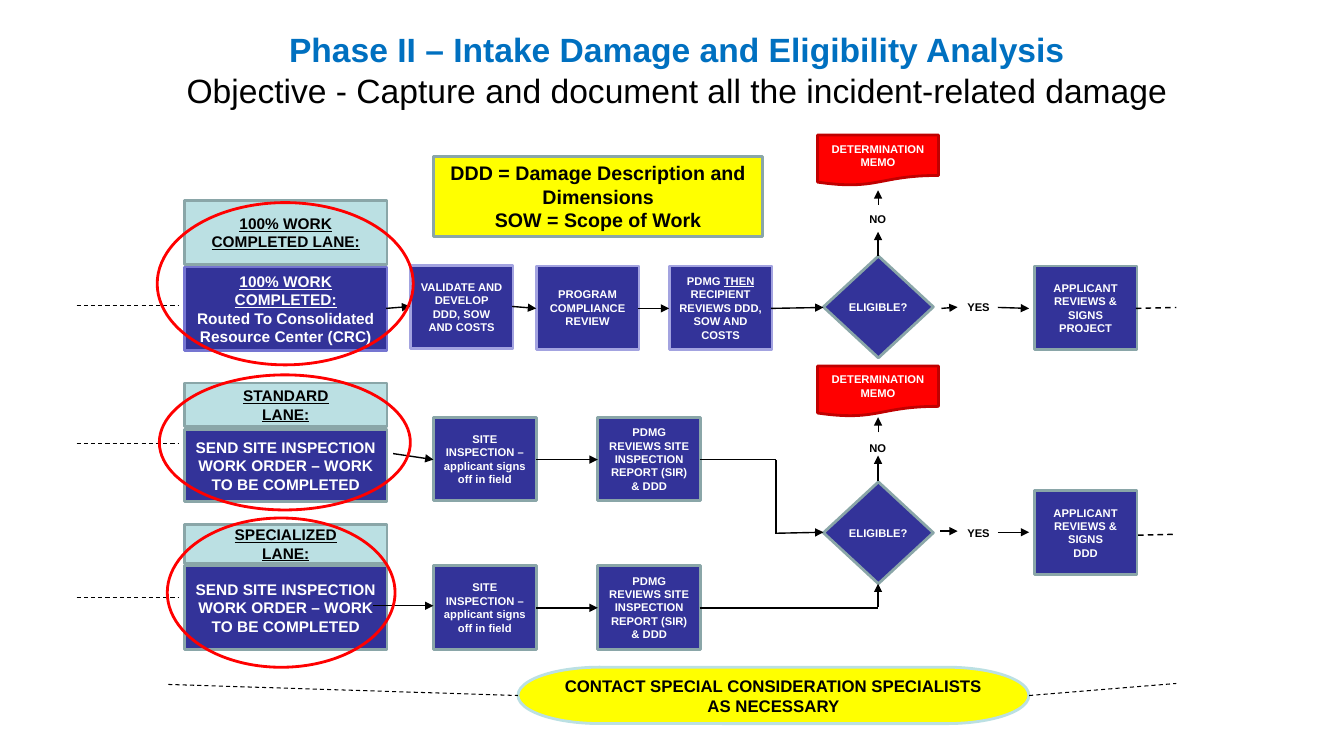
from pptx import Presentation
from pptx import util as u
from pptx.dml.color import RGBColor
from pptx.enum import dml, shapes, text
from pptx.oxml.ns import qn
from lxml import etree

Pt = u.Pt
MSO = shapes.MSO_SHAPE


class Theme:
    font = "Arial"
    title, note, special, lane, step = 24, 14, 12, 11, 8
    blue, navy, teal, yellow, red = "0070C0", "333399", "BBE0E3", "FFFF00", "FF0000"
    grey, violet, lilac, dark_red = "8AA6A8", "7575D1", "A3A3E0", "C00000"
    black, white = "000000", "FFFFFF"


# Content: a text is a list of paragraphs; a run is a string or (string, format)
TITLE = [[("Phase II – Intake Damage and Eligibility Analysis\n", dict(color=Theme.blue, bold=True)),
          "Objective - Capture and document all the incident-related damage"]]
NOTE = ["DDD = Damage Description and Dimensions\nSOW = Scope of Work"]
SPECIAL = ["CONTACT SPECIAL CONSIDERATION SPECIALISTS AS NECESSARY"]
WORK_ORDER = ["SEND SITE INSPECTION WORK ORDER – WORK TO BE COMPLETED"]
COMPLETED = [[("100% WORK COMPLETED:", dict(underline=True))],
             "Routed To Consolidated Resource Center (CRC)"]

# Lanes: heading, heading (top, height), body, body (top, height), edge, ellipse, inlet y
LANES = [
    (["100% WORK COMPLETED LANE:"], (143.3, 45.4), COMPLETED, (190.8, 59.8),
     Theme.violet, (112.3, 144.7, 182.9, 115.9), 218.2),
    (["STANDARD", "LANE:"], (273.6, 31), WORK_ORDER, (306.7, 51.8),
     Theme.grey, (113.8, 267.8, 179.3, 96.5), 316.8),
    (["SPECIALIZED", "LANE:"], (374.4, 28.1), WORK_ORDER, (404, 59.8),
     Theme.grey, (119.5, 370, 162.7, 106.6), 427),
]

# Steps of equal size: left, top, edge, text
INSPECT = ["SITE INSPECTION – applicant signs off in field"]
REPORT = ["PDMG REVIEWS SITE INSPECTION REPORT (SIR) & DDD"]
STEPS = [
    (293, 189.4, Theme.lilac, ["VALIDATE AND DEVELOP DDD, SOW AND COSTS"]),
    (383, 190, Theme.lilac, ["PROGRAM COMPLIANCE REVIEW"]),
    (478, 190, Theme.lilac, [["PDMG ", ("THEN", dict(underline=True)),
                              " RECIPIENT REVIEWS DDD, SOW AND COSTS"]]),
    (738.7, 190, Theme.grey, ["APPLICANT REVIEWS & SIGNS PROJECT"]),
    (738.7, 350.6, Theme.grey, ["APPLICANT REVIEWS & SIGNS", "DDD"]),
]
STEPS += [(x, y, Theme.grey, body) for y in (298, 404)
          for x, body in ((309.6, INSPECT), (427, REPORT))]

# Decisions: tops of diamond, memo, NO label and YES label
DECISIONS = [(182.9, 96.5, 148.3, 211), (344.2, 261.4, 311.8, 372.2)]

# Lines: x1, y1, x2, y2
AXIS = 627.2
ARROWS = [
    (275.8, 220.3, 293, 218.9), (365.8, 218.9, 383, 220.3), (455.8, 220.3, 478, 220.3),
    (550.8, 220.3, 588.2, 219.6), (672.5, 220.3, 684, 219.4), (712.8, 219.6, 735.1, 220.3),
    (280.8, 324, 309.6, 328.3), (266.4, 432.7, 309.6, 432.7),
    (383, 328.3, 427, 328.3), (383, 434.2, 427, 434.2),
    (671.8, 379.4, 684, 379.4), (712.8, 380.2, 735.1, 380.2), (554.4, 380.9, 588.2, 380.2),
    (AXIS, 182.9, AXIS, 165.6), (AXIS, 343.4, AXIS, 325.4), (AXIS, 433.4, AXIS, 416.9),
]
THIN_ARROWS = [(AXIS, 146.2, AXIS, 136), (AXIS, 308.9, AXIS, 298)]
ELBOWS = [(499.7, 434.2, AXIS, 434.2), (499.7, 328.3, 554.4, 328.3), (554.4, 328.3, 554.4, 381.3)]
OUTLETS = [(811.4, 220.3, 840.2, 219.6), (812.9, 382.3, 840.2, 381.6)]
GUIDES = [(120.2, 488.9, 370, 496.8), (735.1, 496.8, 840.2, 488.2)]
GUIDES += [(54.7, lane[-1], 128.2, lane[-1]) for lane in LANES]

prs = Presentation()
prs.slide_width, prs.slide_height = Pt(960), Pt(540)
s = prs.slides.add_slide(prs.slide_layouts[5])


def rgb(value):
    return RGBColor.from_string(value)


def write(tf, paras, size=Theme.step, color=Theme.white, bold=True, underline=False,
          anchor=text.MSO_ANCHOR.MIDDLE, wrap=True):
    tf.word_wrap, tf.vertical_anchor = wrap, anchor
    tf.auto_size = text.MSO_AUTO_SIZE.NONE
    for i, runs in enumerate(paras):
        p = tf.add_paragraph() if i else tf.paragraphs[0]
        p.alignment = text.PP_ALIGN.CENTER
        for run in [runs] if isinstance(runs, str) else runs:
            words, fmt = (run, {}) if isinstance(run, str) else run
            for j, line in enumerate(words.split("\n")):
                if j:
                    p.add_line_break()
                if not line:
                    continue
                r = p.add_run()
                r.text = line
                f = r.font
                f.name, f.size = Theme.font, Pt(size)
                f.bold = fmt.get("bold", bold)
                f.underline = fmt.get("underline", underline)
                f.color.rgb = rgb(fmt.get("color", color))


def box(kind, x, y, w, h, fill, edge, paras=(), **fmt):
    sp = s.shapes.add_shape(kind, Pt(x), Pt(y), Pt(w), Pt(h))
    sp.shadow.inherit = False
    if fill:
        sp.fill.solid()
        sp.fill.fore_color.rgb = rgb(fill)
    else:
        sp.fill.background()
    sp.line.color.rgb, sp.line.width = rgb(edge), Pt(2)
    write(sp.text_frame, paras, **fmt)


def label(x, y, words):
    tb = s.shapes.add_textbox(Pt(x), Pt(y), Pt(30), Pt(17.3))
    write(tb.text_frame, [words], color=Theme.black, wrap=False, anchor=text.MSO_ANCHOR.TOP)


def draw_lines(ends, width=1, arrow=False, dash=False):
    for end in ends:
        cx = s.shapes.add_connector(shapes.MSO_CONNECTOR.STRAIGHT, *map(Pt, end))
        cx.line.color.rgb, cx.line.width = rgb(Theme.black), Pt(width)
        if dash:
            cx.line.dash_style = dml.MSO_LINE.DASH
        if arrow:
            etree.SubElement(cx.line._get_or_add_ln(), qn("a:tailEnd"), type="triangle")
        etree.SubElement(cx._element.spPr, qn("a:effectLst"))


# Title
title = s.shapes.title
title.left, title.top, title.width, title.height = Pt(23.8), Pt(17.3), Pt(919.4), Pt(67)
write(title.text_frame, TITLE, size=Theme.title, color=Theme.black, bold=False,
      anchor=text.MSO_ANCHOR.TOP)

# Lanes and steps
for heading, (top, height), body, (body_top, body_h), edge, _, _ in LANES:
    box(MSO.RECTANGLE, 131.8, body_top, 144.7, body_h, Theme.navy, edge, body, size=Theme.lane)
    box(MSO.RECTANGLE, 131.8, top, 144.7, height, Theme.teal, Theme.grey, heading,
        size=Theme.lane, color=Theme.black, underline=True)
for x, y, edge, body in STEPS:
    box(MSO.RECTANGLE, x, y, 73.5, 59.8, Theme.navy, edge, body)

# Decisions
for diamond, memo, no, yes in DECISIONS:
    box(MSO.DIAMOND, 588.2, diamond, 78.5, 72.7, Theme.navy, Theme.grey, ["ELIGIBLE?"], wrap=False)
    box(MSO.FLOWCHART_DOCUMENT, 584, memo, 86.4, 36, Theme.red, Theme.dark_red,
        ["DETERMINATION MEMO"])
    label(612, no, "NO")
    label(684, yes, "YES")

# Notes
box(MSO.RECTANGLE, 309.6, 111.6, 235.4, 57.6, Theme.yellow, Theme.grey, NOTE,
    size=Theme.note, color=Theme.black)
box(MSO.FLOWCHART_TERMINATOR, 370, 476.6, 365, 40.3, Theme.yellow, Theme.teal, SPECIAL,
    size=Theme.special, color=Theme.black)

# Lines and lane highlights
draw_lines(ARROWS, arrow=True)
draw_lines(THIN_ARROWS, width=0.5, arrow=True)
draw_lines(ELBOWS)
draw_lines(OUTLETS, dash=True)
draw_lines(GUIDES, width=0.75, dash=True)
for lane in LANES:
    box(MSO.OVAL, *lane[5], None, Theme.red)

prs.save("out.pptx")
